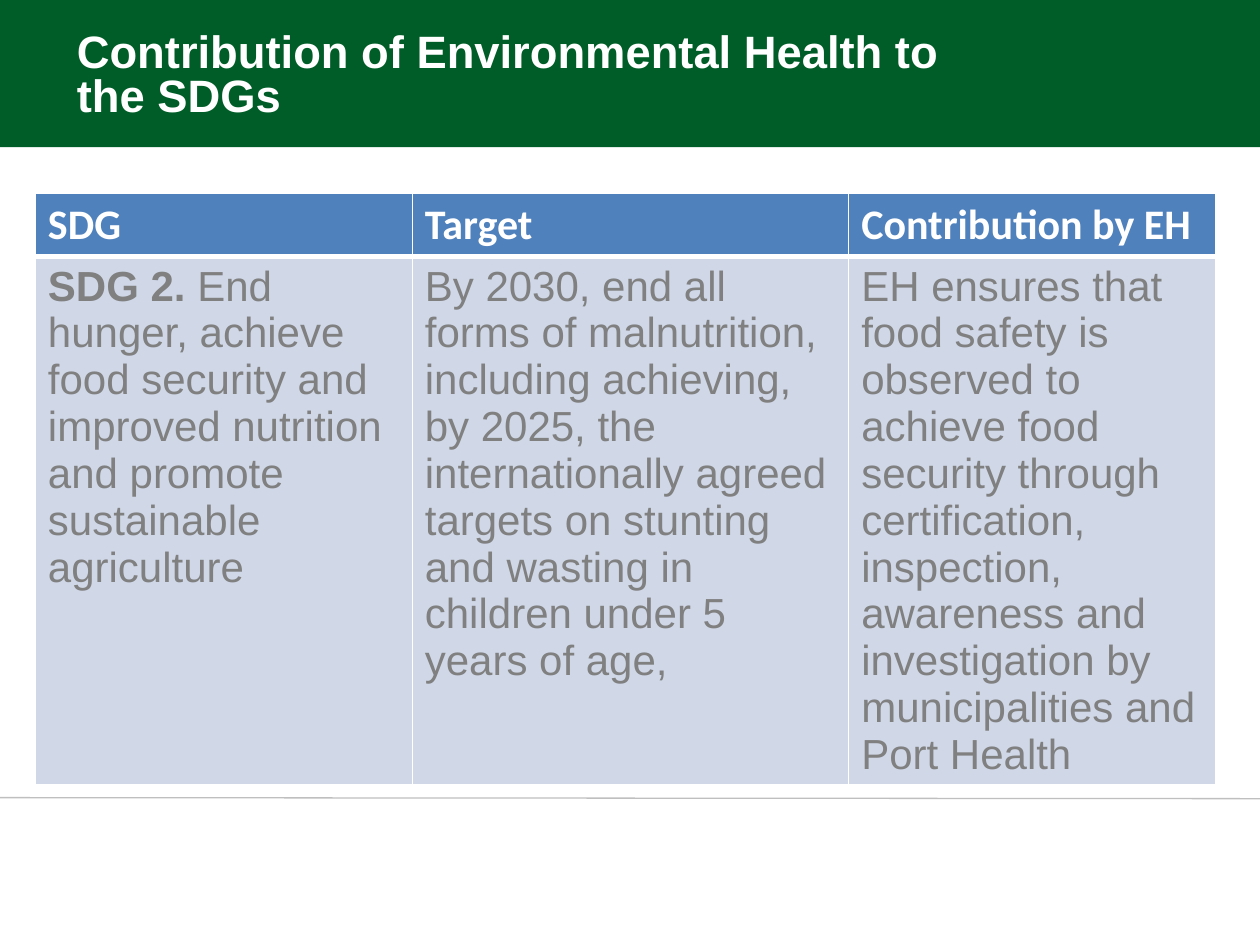
from dataclasses import dataclass

from lxml import etree
from pptx import Presentation
from pptx.dml.color import RGBColor
from pptx.enum.shapes import MSO_CONNECTOR, MSO_SHAPE
from pptx.enum.text import MSO_ANCHOR, MSO_AUTO_SIZE, PP_ALIGN
from pptx.oxml.ns import qn
from pptx.util import Pt

RECT = MSO_SHAPE.RECTANGLE
STRAIGHT = MSO_CONNECTOR.STRAIGHT
BOTTOM = MSO_ANCHOR.BOTTOM
NO_FIT = MSO_AUTO_SIZE.NONE
LEFT = PP_ALIGN.LEFT

COLORS = {
    "green": "005D28",
    "blue": "4F81BD",
    "pale": "D0D8E8",
    "gray": "808080",
    "rule": "BFBFBF",
    "white": "FFFFFF",
}


@dataclass
class Column:
    width: float
    head: str
    lead: str
    body: str


@dataclass
class Style:
    font: str
    size: float
    color: str
    bold: bool = False


TITLE = Style("Arial", 25.9, "white", True)
HEAD = Style("Calibri", 24, "white", True)
LEAD = Style("Arial", 24, "gray", True)
BODY = Style("Arial", 24, "gray")

COLUMNS = [
    Column(215.4, "SDG", "SDG 2. ",
           "End hunger, achieve food security and improved nutrition "
           "and promote sustainable agriculture"),
    Column(249.4, "Target", "",
           "By 2030, end all forms of malnutrition, including achieving, by 2025, "
           "the internationally agreed targets on stunting and wasting in children "
           "under 5 years of age,"),
    Column(209.8, "Contribution by EH", "",
           "EH ensures that food safety is observed to achieve food security through "
           "certification, inspection, awareness and investigation by municipalities "
           "and Port Health"),
]


def color(name: str) -> RGBColor:
    return RGBColor.from_string(COLORS[name])


def format_run(run, style: Style) -> None:
    font = run.font
    font.name, font.size, font.bold = style.font, Pt(style.size), style.bold
    font.color.rgb = color(style.color)


def add_border(cell, side: str, width: float, index: int) -> None:
    line = etree.Element(qn(f"a:ln{side}"), w=str(Pt(width)))
    fill = etree.SubElement(line, qn("a:solidFill"))
    etree.SubElement(fill, qn("a:srgbClr"), val=COLORS["white"])
    cell._tc.get_or_add_tcPr().insert(index, line)


def fill_cell(cell, parts: list[tuple[str, Style]], fill: str, base: float) -> None:
    cell.fill.solid()
    cell.fill.fore_color.rgb = color(fill)
    # Borders come before the fill, in left, right, top, bottom order
    for index, side in enumerate("LRTB"):
        add_border(cell, side, base if side == "B" else 1, index)
    para = cell.text_frame.paragraphs[0]
    for text, style in parts:
        if text:
            run = para.add_run()
            run.text = text
            format_run(run, style)


def add_grid(slide) -> None:
    width = sum(col.width for col in COLUMNS)
    frame = slide.shapes.add_table(2, len(COLUMNS), Pt(20.2), Pt(110.2),
                                   Pt(width), Pt(338))
    table = frame.table
    table.rows[0].height, table.rows[1].height = Pt(36), Pt(302)
    for index, col in enumerate(COLUMNS):
        table.columns[index].width = Pt(col.width)
        fill_cell(table.cell(0, index), [(col.head, HEAD)], "blue", 3)
        fill_cell(table.cell(1, index), [(col.lead, LEAD), (col.body, BODY)], "pale", 1)
        # The shared edge keeps the thick header border
        top = table.cell(1, index)._tc.tcPr.find(qn("a:lnT"))
        top.set("w", str(Pt(3)))


def add_band(slide) -> None:
    band = slide.shapes.add_shape(RECT, 0, 0, Pt(720), Pt(84.2))
    band.shadow.inherit = False
    band.fill.solid()
    band.fill.fore_color.rgb = color("green")
    band.line.fill.background()
    # Keep the band behind the title
    slide.shapes._spTree.insert(2, band._element)


def add_rule(slide) -> None:
    rule = slide.shapes.add_connector(STRAIGHT, 0, Pt(455.8), Pt(720), Pt(456.4))
    rule.line.color.rgb = color("rule")
    rule.line.width = Pt(0.75)
    etree.SubElement(rule._element.spPr, qn("a:effectLst"))


def set_title(slide, text: str) -> None:
    title = slide.shapes.title
    title.left, title.top = Pt(36.7), Pt(9.4)
    title.width, title.height = Pt(527), Pt(63.4)
    frame = title.text_frame
    frame.text = text
    frame.word_wrap = True
    frame.auto_size = NO_FIT
    frame.vertical_anchor = BOTTOM
    para = frame.paragraphs[0]
    para.alignment = LEFT
    para.line_spacing = 0.8
    format_run(para.runs[0], TITLE)


def main() -> None:
    deck = Presentation()
    deck.slide_width, deck.slide_height = Pt(720), Pt(540)
    slide = deck.slides.add_slide(deck.slide_layouts[5])
    # Header
    add_band(slide)
    set_title(slide, "Contribution of Environmental Health to the SDGs")
    # Footer line and table
    add_rule(slide)
    add_grid(slide)
    deck.save("out.pptx")


if __name__ == "__main__":
    main()
